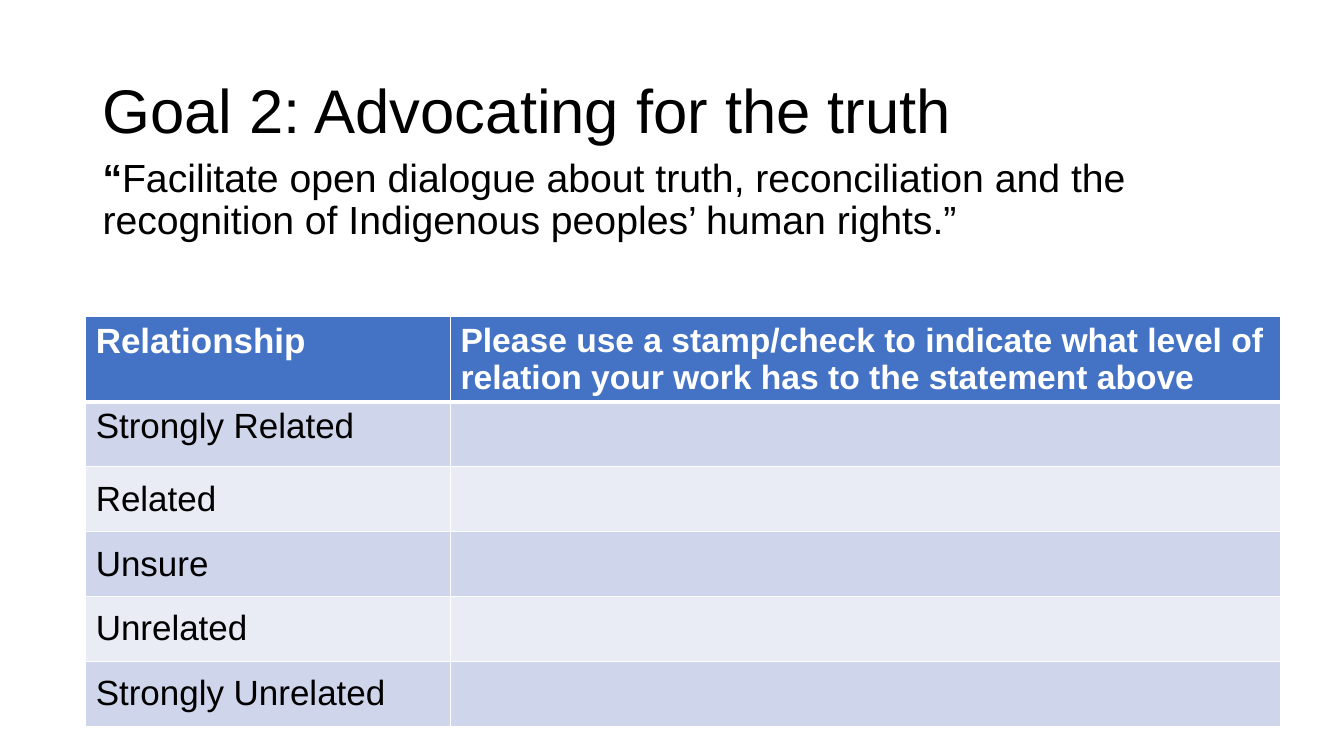
from pptx import Presentation
from pptx.util import Cm, Pt
from pptx.dml.color import RGBColor
from pptx.enum.text import PP_ALIGN, MSO_ANCHOR, MSO_AUTO_SIZE
from pptx.oxml.ns import qn
from lxml.etree import SubElement

FONT = "Arial"
COLORS = {"ink": "000000", "white": "FFFFFF", "head": "4472C4",
          "dark": "CFD5EA", "light": "E9EBF5"}
TITLE = [("Goal 2: Advocating for the truth", False)]
QUOTE = [("“", True),
         ("Facilitate open dialogue about truth, reconciliation and the "
          "recognition of Indigenous peoples’ human rights.”", False)]
HEADS = [("Relationship", 25),
         ("Please use a stamp/check to indicate what level of "
          "relation your work has to the statement above", 24)]
LEVELS = ["Strongly Related", "Related", "Unsure", "Unrelated", "Strongly Unrelated"]
WIDTHS = [9.19, 20.93]
HEAD_H, ROW_H = 1.98, 1.635


def add_run(para, text, size, color, bold=False):
    run = para.add_run()
    run.text = text
    font = run.font
    font.name, font.size, font.bold = FONT, Pt(size), bold
    font.color.rgb = RGBColor.from_string(COLORS[color])


def fill_holder(shape, box, runs, size, anchor):
    shape.left, shape.top, shape.width, shape.height = map(Cm, box)
    frame = shape.text_frame
    frame.word_wrap = True
    frame.auto_size = MSO_AUTO_SIZE.NONE
    frame.vertical_anchor = anchor
    para = frame.paragraphs[0]
    para.alignment = PP_ALIGN.LEFT
    para.line_spacing = 0.9
    for text, bold in runs:
        add_run(para, text, size, "ink", bold)
    return para


def add_edges(cell, top, bottom):
    props = cell._tc.get_or_add_tcPr()
    for side, width in zip("LRTB", (1, 1, top, bottom)):
        line = SubElement(props, qn(f"a:ln{side}"), w=str(Pt(width)))
        paint = SubElement(line, qn("a:solidFill"))
        SubElement(paint, qn("a:srgbClr"), val=COLORS["white"])


def style_cell(cell, color, top=1, bottom=1):
    add_edges(cell, top, bottom)
    cell.fill.solid()
    cell.fill.fore_color.rgb = RGBColor.from_string(COLORS[color])


def add_grid(slide):
    high = HEAD_H + ROW_H * len(LEVELS)
    frame = slide.shapes.add_table(len(LEVELS) + 1, len(WIDTHS), Cm(2.16), Cm(7.98),
                                   Cm(sum(WIDTHS)), Cm(high))
    table = frame.table
    for col, width in zip(table.columns, WIDTHS):
        col.width = Cm(width)
    for i, row in enumerate(table.rows):
        row.height = Cm(ROW_H if i else HEAD_H)
    for j, (text, size) in enumerate(HEADS):
        cell = table.cell(0, j)
        style_cell(cell, "head", bottom=3)
        add_run(cell.text_frame.paragraphs[0], text, size, "white", True)
    for i, level in enumerate(LEVELS, 1):
        for j in range(len(WIDTHS)):
            style_cell(table.cell(i, j), "dark" if i % 2 else "light", top=3 if i == 1 else 1)
        cell = table.cell(i, 0)
        cell.vertical_anchor = MSO_ANCHOR.TOP if i == 1 else MSO_ANCHOR.MIDDLE
        add_run(cell.text_frame.paragraphs[0], level, 25, "ink")


def main():
    deck = Presentation()
    deck.slide_width, deck.slide_height = Cm(33.867), Cm(19.05)
    slide = deck.slides.add_slide(deck.slide_layouts[1])
    title, body = slide.placeholders
    fill_holder(title, (2.33, 1.01, 29.21, 3.68), TITLE, 44, MSO_ANCHOR.MIDDLE)
    para = fill_holder(body, (2.33, 3.86, 29.21, 12.09), QUOTE, 28, MSO_ANCHOR.TOP)
    para.space_before = Pt(10)
    props = para._p.get_or_add_pPr()
    props.set("marL", "0")
    props.set("indent", "0")
    SubElement(props, qn("a:buNone"))
    add_grid(slide)
    deck.save("out.pptx")


if __name__ == "__main__":
    main()
